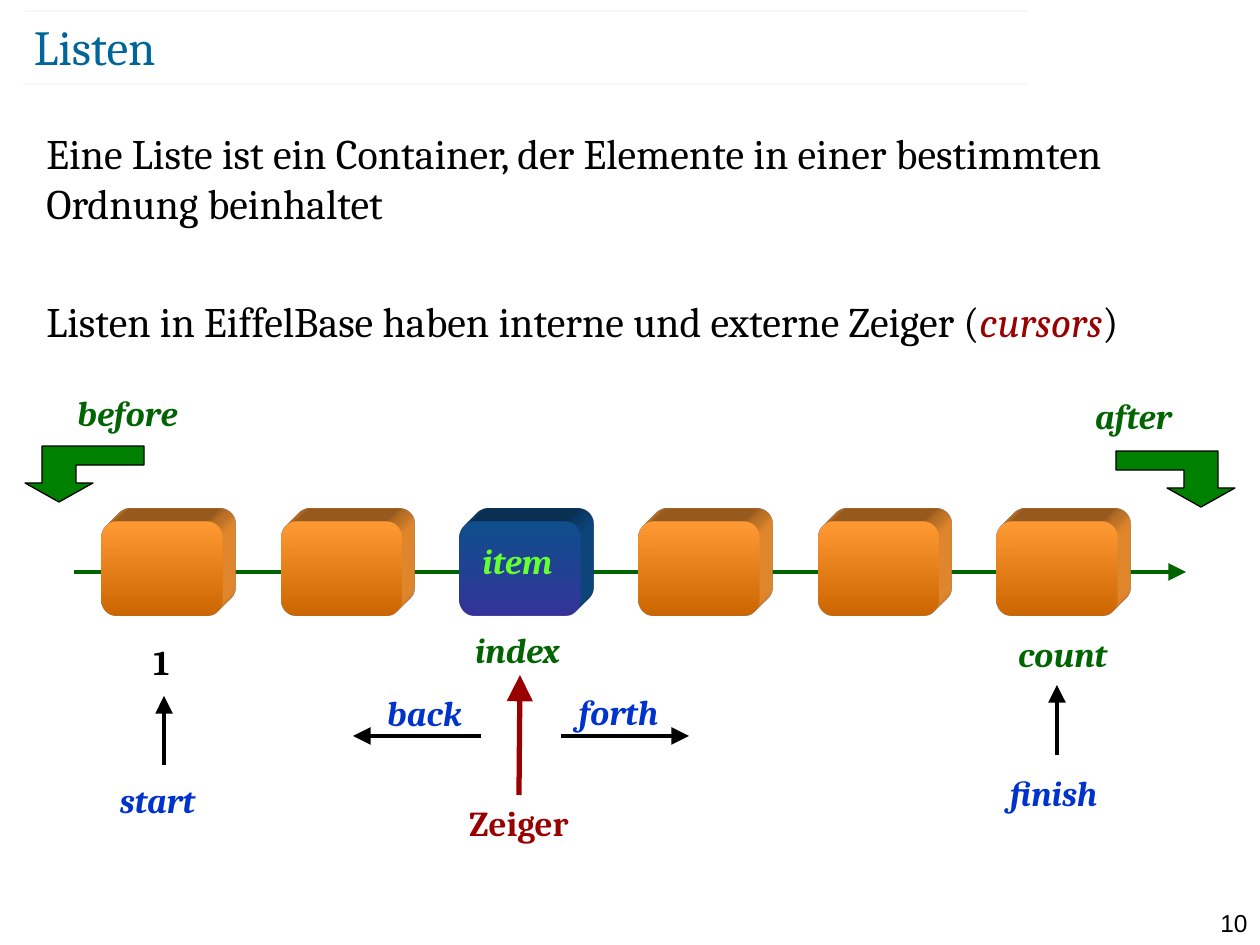
from dataclasses import dataclass

from lxml.etree import SubElement
from pptx import Presentation
from pptx.dml.color import RGBColor
from pptx.enum.shapes import MSO_CONNECTOR as Connector, MSO_SHAPE as Shape
from pptx.enum.text import MSO_ANCHOR as Anchor, PP_ALIGN as Align
from pptx.oxml.ns import qn
from pptx.util import Emu, Pt

PX = 914400 / 126


@dataclass(frozen=True)
class Theme:
    serif: str = "Cambria"
    sans: str = "Arial"
    title_size: int = 28
    body_size: int = 24
    label_size: int = 20
    number_size: int = 14
    title: str = "006699"
    black: str = "000000"
    red: str = "990000"
    green: str = "006400"
    blue: str = "0033CC"
    item: str = "66FF33"
    bent_arrow: str = "008000"
    orange_cube: tuple = ("FF9933", "CC6600")
    blue_cube: tuple = ("0F4F8C", "333399")


THEME = Theme()
CUBE_LEFT, CUBE_TOP, CUBE_STEP, CUBE_COUNT = 102, 522, 179, 6
CUBE_WIDTH, CUBE_HEIGHT, CUBE_DEPTH = 120, 94, 37
ITEM_POSITION = 2
BENT_WIDTH = 119
BENT_OUTLINE = [(34, 56), (68, 37), (51, 37), (51, 19), (119, 19),
                (119, 0), (17, 0), (17, 37), (0, 37)]


def px(value):
    return Emu(round(value * PX))


def rgb(value):
    return RGBColor.from_string(value)


def style_run(run, size, color, font=THEME.serif, bold=False, italic=False):
    run.font.name = font
    run.font.size = Pt(size)
    run.font.color.rgb = rgb(color)
    run.font.bold = bold
    run.font.italic = italic


def add_text_box(slide, left, top, width, height):
    box = slide.shapes.add_textbox(px(left), px(top), px(width), px(height))
    box.text_frame.word_wrap = True
    return box


def add_line_of_text(slide, area, text, align, size, color, **style):
    box = add_text_box(slide, *area)
    box.text_frame.text = text
    paragraph = box.text_frame.paragraphs[0]
    paragraph.alignment = align
    style_run(paragraph.runs[0], size, color, **style)
    return box


def add_label(slide, text, left, top, width, color, italic=True):
    return add_line_of_text(slide, (left, top, width, 54), text, Align.CENTER,
                            THEME.label_size, color, bold=True, italic=italic)


def add_line(slide, start, end, color, width):
    line = slide.shapes.add_connector(
        Connector.STRAIGHT, px(start[0]), px(start[1]), px(end[0]), px(end[1]))
    line.line.color.rgb = rgb(color)
    line.line.width = Pt(width)
    SubElement(line._element.spPr, qn("a:effectLst"))
    return line


def add_arrow(slide, start, end, color=THEME.black, width=2):
    arrow = add_line(slide, start, end, color, width)
    SubElement(arrow.line._get_or_add_ln(), qn("a:tailEnd"),
               type="triangle", w="lg", len="lg")
    return arrow


def add_title_rule(slide, left, top):
    rule = add_line(slide, (left, top), (left + 1004, top), THEME.title, 0.1)
    color = rule.line._get_or_add_ln().find(".//" + qn("a:srgbClr"))
    SubElement(color, qn("a:alpha"), val="35000")


def extrude(shape, color):
    """Give the shape an oblique depth towards the top right."""
    properties = shape._element.spPr
    scene = SubElement(properties, qn("a:scene3d"))
    SubElement(scene, qn("a:camera"), prst="legacyObliqueTopRight")
    SubElement(scene, qn("a:lightRig"), rig="legacyFlat3", dir="b")
    solid = SubElement(properties, qn("a:sp3d"), extrusionH=str(px(CUBE_DEPTH)),
                       prstMaterial="legacyMatte")
    depth_color = SubElement(solid, qn("a:extrusionClr"))
    SubElement(depth_color, qn("a:srgbClr"), val=color)


def add_cube(slide, left, colors):
    cube = slide.shapes.add_shape(Shape.ROUNDED_RECTANGLE, px(left), px(CUBE_TOP),
                                  px(CUBE_WIDTH), px(CUBE_HEIGHT))
    cube.shadow.inherit = False
    cube.adjustments[0] = 0.167
    cube.fill.gradient()
    cube.fill.gradient_angle = 270
    for stop, color, position in zip(cube.fill.gradient_stops, colors, (0, 1)):
        stop.color.rgb = rgb(color)
        stop.position = position
    cube.line.fill.background()
    extrude(cube, colors[0])


def add_bent_arrow(slide, left, top, mirrored=False):
    points = [(left + (BENT_WIDTH - x if mirrored else x), top + y)
              for x, y in BENT_OUTLINE]
    builder = slide.shapes.build_freeform(*points[0], scale=PX)
    builder.add_line_segments(points[1:], close=True)
    shape = builder.convert_to_shape()
    shape.shadow.inherit = False
    shape.fill.solid()
    shape.fill.fore_color.rgb = rgb(THEME.bent_arrow)
    shape.line.color.rgb = rgb(THEME.black)
    shape.line.width = Pt(0.75)


def add_heading(slide):
    add_title_rule(slide, 23, 84)
    add_title_rule(slide, 25, 11)
    title = add_line_of_text(slide, (34, 16, 1095, 60), "Listen", Align.LEFT,
                             THEME.title_size, THEME.title)
    frame = title.text_frame
    frame.vertical_anchor = Anchor.MIDDLE
    frame.margin_left = frame.margin_right = frame.margin_top = frame.margin_bottom = 0


def add_body(slide):
    frame = add_text_box(slide, 34, 121, 1184, 777).text_frame
    frame.text = ("Eine Liste ist ein Container, der Elemente in einer "
                  "bestimmten Ordnung beinhaltet")
    style_run(frame.paragraphs[0].runs[0], THEME.body_size, THEME.black)
    paragraph = frame.add_paragraph()
    paragraph.space_before = Pt(38.5)
    for text, color, italic in (
            ("Listen in EiffelBase haben interne und externe Zeiger (", THEME.black, False),
            ("cursors", THEME.red, True),
            (")", THEME.black, False)):
        run = paragraph.add_run()
        run.text = text
        style_run(run, THEME.body_size, color, italic=italic)


def add_list_diagram(slide):
    add_arrow(slide, (74, 572), (1186, 572), THEME.green)
    for position in range(CUBE_COUNT):
        add_cube(slide, CUBE_LEFT + position * CUBE_STEP,
                 THEME.blue_cube if position == ITEM_POSITION else THEME.orange_cube)
    add_bent_arrow(slide, 25, 446)
    add_bent_arrow(slide, 1116, 451, mirrored=True)
    for text, left, top, width, color in (
            ("before", 38, 385, 179, THEME.green),
            ("after", 1076, 388, 115, THEME.green),
            ("item", 461, 533, 113, THEME.item),
            ("index", 456, 622, 123, THEME.green),
            ("count", 997, 626, 131, THEME.green),
            ("back", 367, 685, 115, THEME.blue),
            ("forth", 561, 684, 115, THEME.blue),
            ("start", 83, 772, 149, THEME.blue),
            ("finish", 979, 765, 149, THEME.blue)):
        add_label(slide, text, left, top, width, color)
    add_label(slide, "1", 104, 634, 115, THEME.black, italic=False)
    cursor = add_label(slide, "Zeiger", 430, 795, 178, THEME.red, italic=False)
    add_arrow(slide, (520, 795), (520, 675), THEME.red, 3).begin_connect(cursor, 0)
    for start, end in (((561, 736), (689, 736)), ((481, 736), (353, 736)),
                       ((164, 765), (164, 696)), ((1057, 755), (1057, 685))):
        add_arrow(slide, start, end)


def main():
    presentation = Presentation()
    presentation.slide_width, presentation.slide_height = px(1260), px(945)
    slide = presentation.slides.add_slide(presentation.slide_layouts[6])
    add_line_of_text(slide, (1191, 902, 69, 30), "10", Align.RIGHT,
                     THEME.number_size, THEME.black, font=THEME.sans)
    add_heading(slide)
    add_body(slide)
    add_list_diagram(slide)
    presentation.save("out.pptx")


if __name__ == "__main__":
    main()
